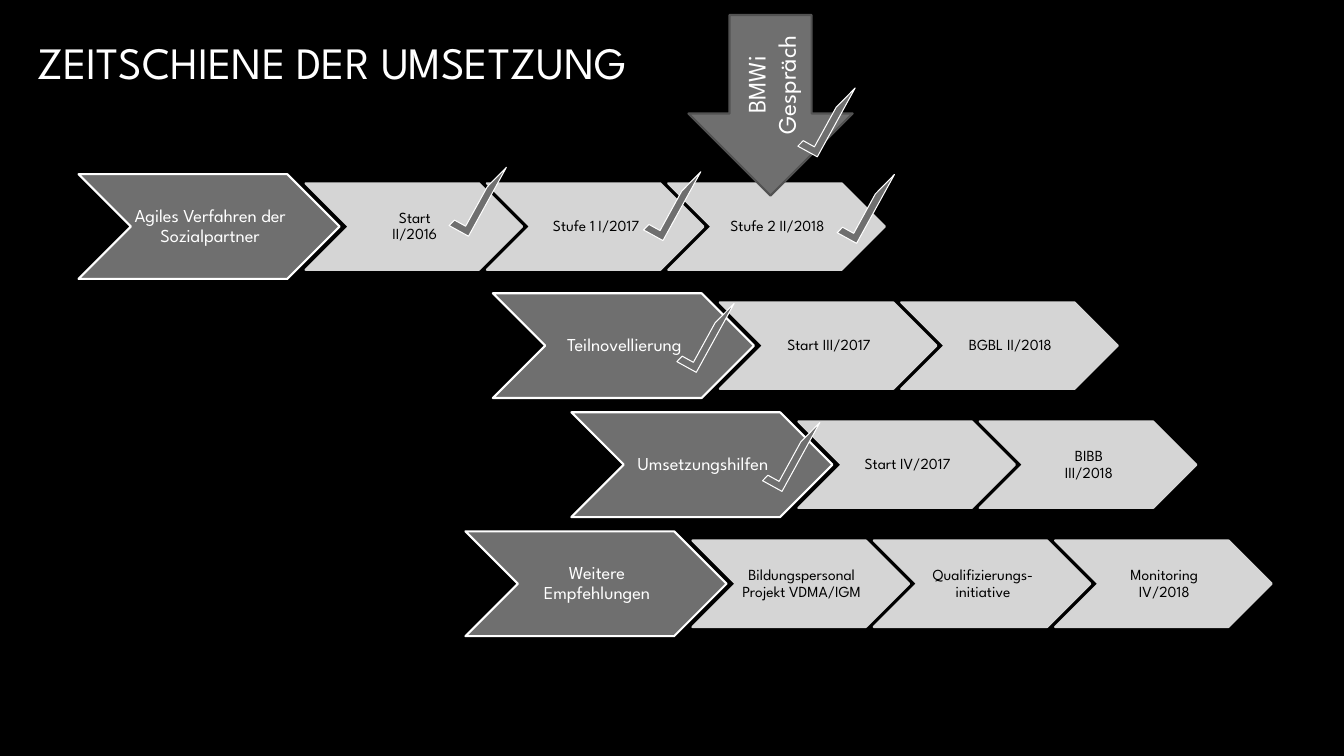
"""Build the timeline slide with chevron rows, ticks and a meeting arrow."""
from pptx import Presentation
from pptx.dml.color import RGBColor
from pptx.enum.shapes import MSO_SHAPE
from pptx.enum.text import MSO_ANCHOR, PP_ALIGN
from pptx.util import Cm, Pt

FONT = "League Spartan"
WHITE, BLACK, GREY, LIGHT, DARK = "FFFFFF", "000000", "6F6F6F", "D5D5D5", "525252"
HEADER = {"size": (6.58, 2.64), "fill": GREY, "line": WHITE, "points": 13, "color": WHITE}
STEP = {"size": (5.46, 2.18), "fill": LIGHT, "line": LIGHT, "points": 11, "color": BLACK}
CHEVRON_FRAME = {
    "margin_left": Cm(0.05), "margin_right": Cm(0),
    "margin_top": Cm(0.03), "margin_bottom": Cm(0.03),
}
ROW_TOP, ROW_PITCH = 4.39, 3.0
STEP_LEFT, STEP_DOWN, STEP_PITCH = 5.72, 0.23, 4.57
ROWS = [
    (1.98, "Agiles Verfahren der Sozialpartner",
     ["Start\nII/2016", "Stufe 1 I/2017", "Stufe 2 II/2018"]),
    (12.42, "Teilnovellierung", ["Start III/2017", "BGBL II/2018"]),
    (14.4, "Umsetzungshilfen", ["Start IV/2017", "BIBB\nIII/2018"]),
    (11.73, "Weitere Empfehlungen",
     ["Bildungspersonal\nProjekt VDMA/IGM", "Qualifizierungs-\ninitiative",
      "Monitoring\nIV/2018"]),
]
TICKS = [(11.05, 4.67), (15.95, 4.78), (19.84, 2.67),
         (16.79, 8.1), (18.95, 11.1), (20.83, 4.85)]


def rgb(value):
    """Return the colour for a hex string."""
    return RGBColor.from_string(value)


def apply_format(target, values):
    """Set each attribute named in a dict on the target."""
    for name, value in values.items():
        setattr(target, name, value)


def write_text(shape, text, points, color, align=PP_ALIGN.CENTER, spacing=1.0, frame=None):
    """Write one vertically centred paragraph into a shape."""
    text_frame = shape.text_frame
    apply_format(text_frame, {
        "word_wrap": True, "vertical_anchor": MSO_ANCHOR.MIDDLE, **(frame or {})})
    paragraph = text_frame.paragraphs[0]
    paragraph.text = text
    apply_format(paragraph, {"alignment": align, "line_spacing": spacing})
    apply_format(paragraph.font, {"name": FONT, "size": Pt(points)})
    paragraph.font.color.rgb = rgb(color)


def add_figure(slide, kind, left, top, size, fill, line, weight):
    """Add a filled and outlined preset shape without a shadow."""
    shape = slide.shapes.add_shape(kind, *map(Cm, (left, top, *size)))
    shape.shadow.inherit = False
    shape.fill.solid()
    shape.fill.fore_color.rgb = rgb(fill)
    shape.line.color.rgb = rgb(line)
    shape.line.width = Pt(weight)
    return shape


def add_chevron(slide, left, top, text, style):
    """Add a labelled chevron in the given style."""
    shape = add_figure(slide, MSO_SHAPE.CHEVRON, left, top,
                       style["size"], style["fill"], style["line"], 1.5)
    write_text(shape, text, style["points"], style["color"],
               spacing=0.9, frame=CHEVRON_FRAME)


def add_row(slide, left, top, header, steps):
    """Add a header chevron followed by its step chevrons."""
    add_chevron(slide, left, top, header, HEADER)
    for index, step in enumerate(steps):
        step_left = left + STEP_LEFT + index * STEP_PITCH
        add_chevron(slide, step_left, top + STEP_DOWN, step, STEP)


def add_tick(slide, left, top):
    """Add a check mark made from a turned half frame."""
    tick = add_figure(slide, MSO_SHAPE.HALF_FRAME, left, top, (1.98, 0.56), GREY, WHITE, 0.75)
    tick.rotation = 298.8
    tick._element.spPr.xfrm.set("flipV", "1")


def add_meeting_arrow(slide, text):
    """Add the down arrow with text running upwards."""
    arrow = add_figure(slide, MSO_SHAPE.DOWN_ARROW, 17.35, 0.38, (4.14, 4.55), GREY, DARK, 1.5)
    write_text(arrow, text, 18, WHITE)
    arrow.text_frame._txBody.bodyPr.set("vert", "vert270")


def add_title(slide, text):
    """Add the slide title."""
    title = slide.shapes.add_textbox(Cm(0.69), Cm(-0.99), Cm(27.51), Cm(5.28))
    write_text(title, text, 32, WHITE, align=PP_ALIGN.LEFT, spacing=0.9)


def main():
    """Build and save the presentation."""
    presentation = Presentation()
    apply_format(presentation, {"slide_width": Cm(33.87), "slide_height": Cm(19.05)})
    slide = presentation.slides.add_slide(presentation.slide_layouts[6])
    slide.background.fill.solid()
    slide.background.fill.fore_color.rgb = rgb(BLACK)
    add_title(slide, "ZEITSCHIENE DER UMSETZUNG")
    for index, (left, header, steps) in enumerate(ROWS):
        add_row(slide, left, ROW_TOP + index * ROW_PITCH, header, steps)
    add_meeting_arrow(slide, "BMWi Gespräch")
    for left, top in TICKS:
        add_tick(slide, left, top)
    presentation.save("out.pptx")


if __name__ == "__main__":
    main()
